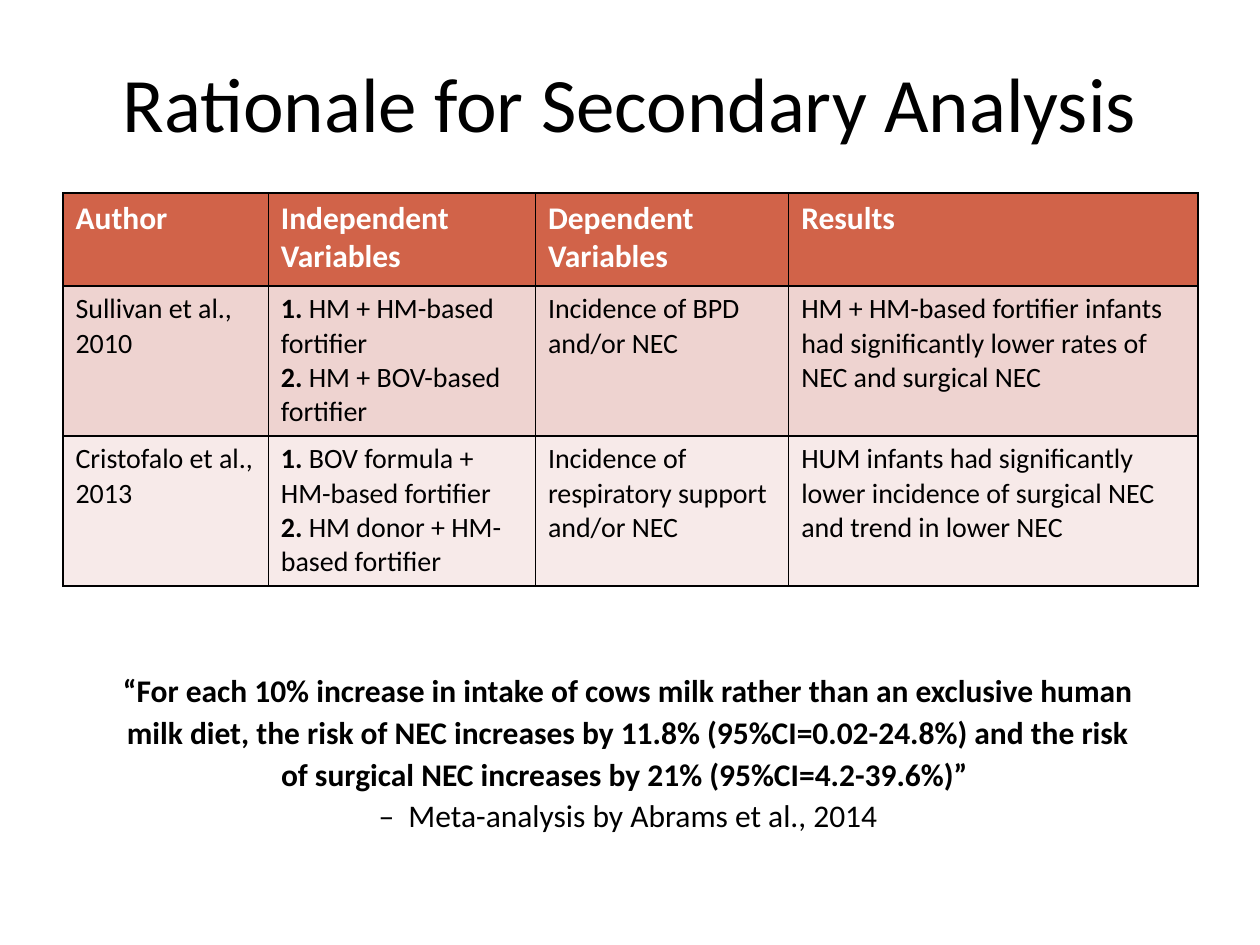
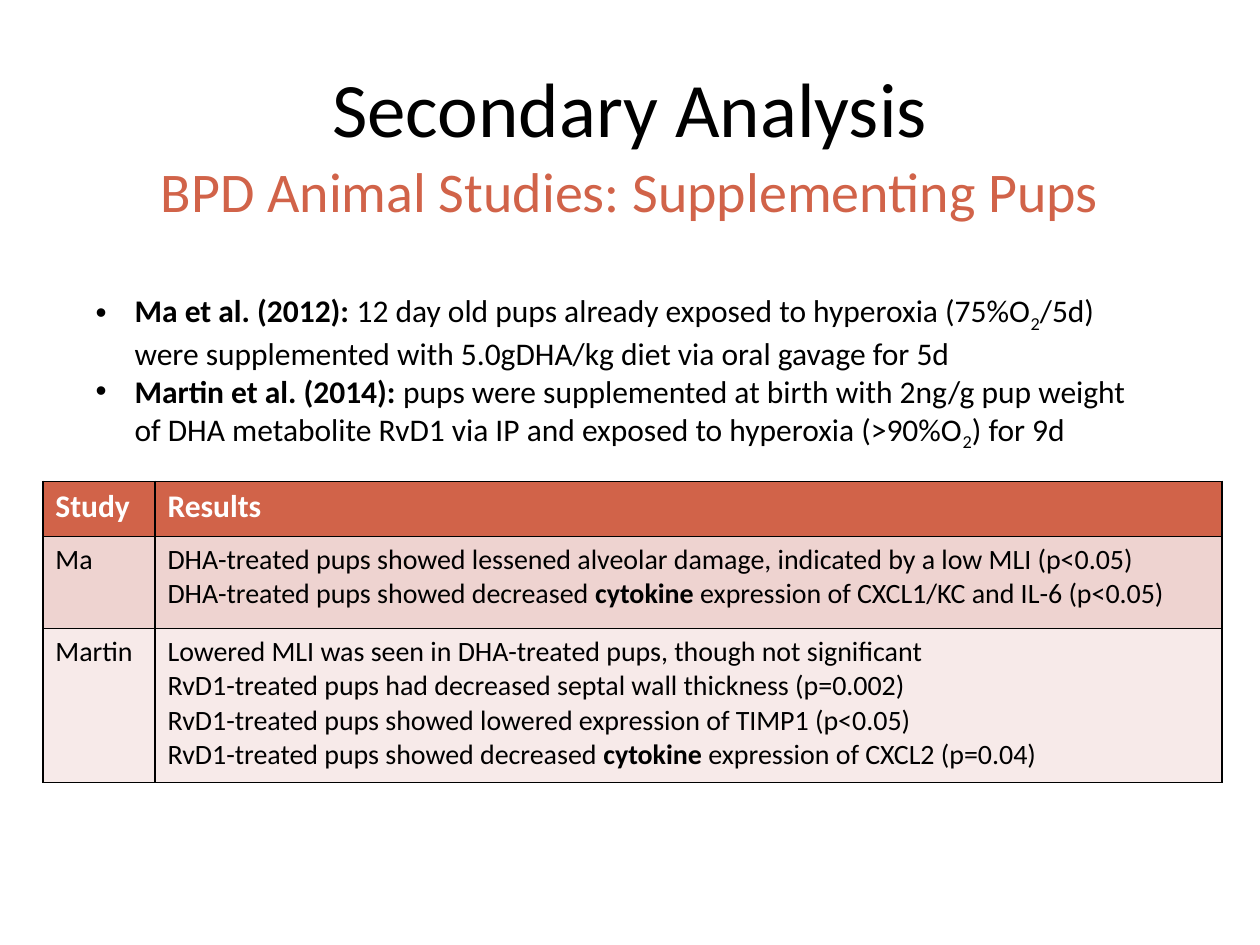
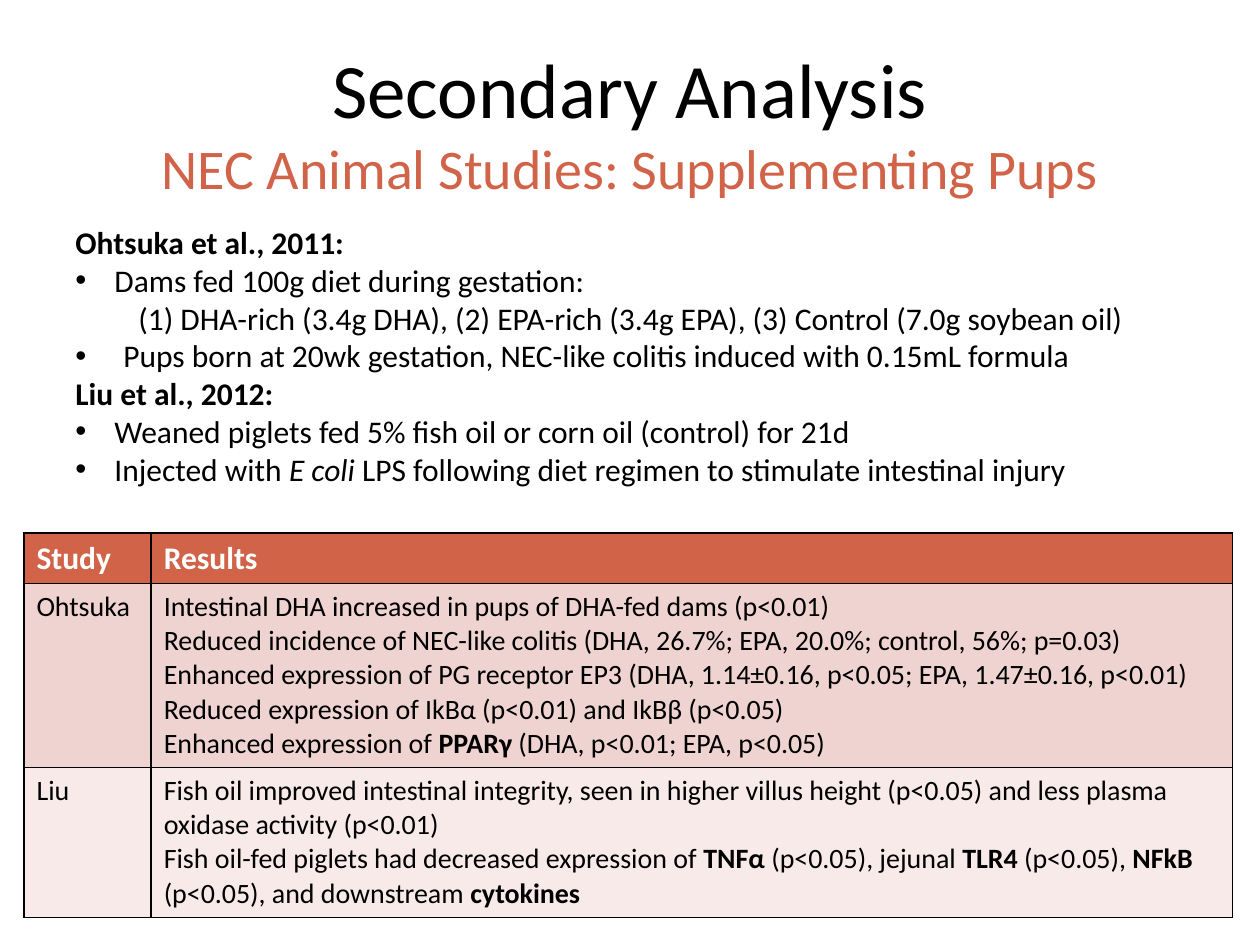
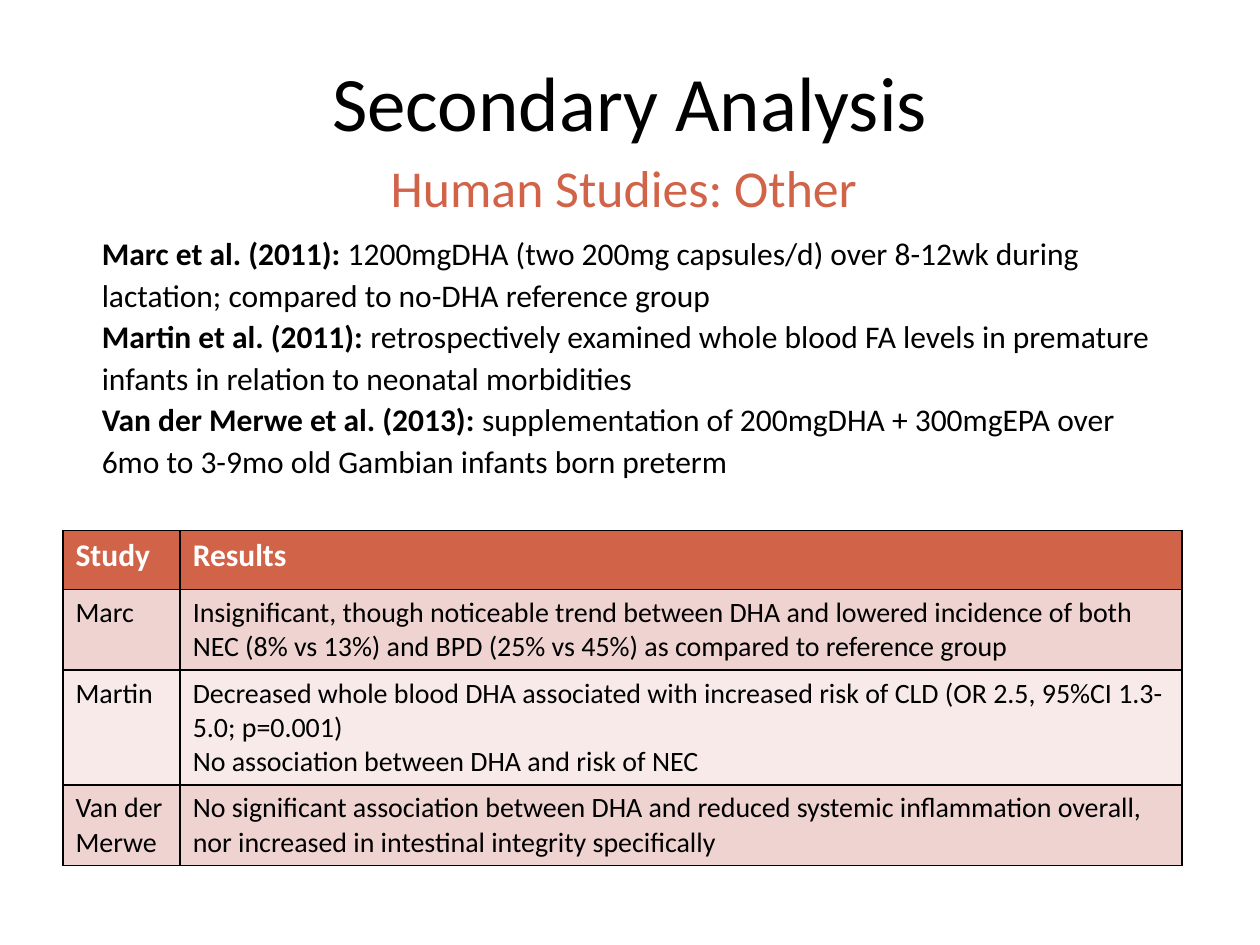
from dataclasses import dataclass

from lxml import etree
from pptx import Presentation
from pptx import util as u
from pptx.dml.color import RGBColor
from pptx.enum import text
from pptx.oxml import ns


@dataclass(frozen=True)
class Theme:
    font: str = "Calibri"
    ink: str = "000000"
    paper: str = "FFFFFF"
    accent: str = "D16349"
    bands: tuple = ("EED3D0", "F7EAE9")
    title_size: float = 44
    subtitle_size: float = 32
    body_size: float = 18
    cell_size: float = 16
    border: float = 1


THEME = Theme()
SLIDE_WIDTH, SLIDE_HEIGHT = 10, 7.5
MARGIN = SLIDE_WIDTH / 20
CONTENT_WIDTH = SLIDE_WIDTH - 2 * MARGIN

# Left margin and first-line indent of each paragraph kind, in inches
INDENTS = {"bullet": (0.31, -0.31), "wide bullet": (0.38, -0.38), "nested": (0.5, 0)}

# In all wording: *bold*, _italic_, ~subscript~; a new line starts a paragraph.
# Boxes are left, top, width, height; titles and subtitles give top and height.
SLIDES = [
    {
        "title": ("Rationale for Secondary Analysis", 0.3, 1.02),
        "table": {
            "at": (0.5, 1.53),
            "columns": (1.63, 2.12, 2.01, 3.25),
            "rows": (0.74, 1.19, 1.19),
            "cells": [
                ("Author", "Independent Variables", "Dependent Variables", "Results"),
                ("Sullivan et al., 2010",
                 "*1. *HM + HM-based fortifier\n*2. *HM + BOV-based fortifier",
                 "Incidence of BPD and/or NEC",
                 "HM + HM-based fortifier infants had significantly lower rates "
                 "of NEC and surgical NEC"),
                ("Cristofalo et al., 2013",
                 "*1. *BOV formula + HM-based fortifier\n"
                 "*2. *HM donor + HM-based fortifier",
                 "Incidence of respiratory support and/or NEC",
                 "HUM infants had significantly lower incidence of surgical NEC "
                 "and trend in lower NEC"),
            ],
        },
        "body": {
            "box": (0.78, 5.25, 8.41, 1.43),
            "align": text.PP_ALIGN.CENTER,
            "line_spacing": 1.1,
            "paragraphs": [
                ("plain", "*“For each 10% increase in intake of cows milk rather than an "
                          "exclusive human milk diet, the risk of NEC increases by 11.8% "
                          "(95%CI=0.02-24.8%) and the risk of surgical NEC increases by "
                          "21% (95%CI=4.2-39.6%)” *"),
                ("plain", "–  Meta-analysis by Abrams et al., 2014"),
            ],
        },
    },
    {
        "title": ("Secondary Analysis", 0.36, 0.98),
        "subtitle": ("BPD Animal Studies: Supplementing Pups", 1.19, 0.69),
        "table": {
            "at": (0.34, 3.82),
            "columns": (0.89, 8.47),
            "rows": (0.44, 0.73, 1.22),
            "cells": [
                ("Study", "Results"),
                ("Ma",
                 "DHA-treated pups showed lessened alveolar damage, indicated by a low "
                 "MLI (p<0.05)\n"
                 "DHA-treated pups showed decreased *cytokine* expression of CXCL1/KC "
                 "and IL-6 (p<0.05)"),
                ("Martin",
                 "Lowered MLI was seen in DHA-treated pups, though not significant\n"
                 "RvD1-treated pups had decreased septal wall thickness (p=0.002)\n"
                 "RvD1-treated pups showed lowered expression of TIMP1 (p<0.05)\n"
                 "RvD1-treated pups showed decreased *cytokine* expression of CXCL2 "
                 "(p=0.04)"),
            ],
        },
        "body": {
            "box": (0.66, 2.26, 8.51, 1.31),
            "paragraphs": [
                ("bullet", "*Ma et al. (2012): *12 day old pups already exposed to hyperoxia "
                           "(75%O~2~/5d) were supplemented with 5.0gDHA/kg diet via oral "
                           "gavage for 5d"),
                ("bullet", "*Martin et al. (2014):* pups were supplemented at birth with "
                           "2ng/g pup weight of DHA metabolite RvD1 via IP and exposed to "
                           "hyperoxia (>90%O~2~) for 9d"),
            ],
        },
    },
    {
        "title": ("Secondary Analysis", 0.23, 0.93),
        "subtitle": ("NEC Animal Studies: Supplementing Pups", 1.01, 0.71),
        "table": {
            "at": (0.19, 4.23),
            "columns": (1.01, 8.58),
            "rows": (0.4, 1.46, 1.19),
            "cells": [
                ("Study", "Results"),
                ("Ohtsuka",
                 "Intestinal DHA increased in pups of DHA-fed dams (p<0.01)\n"
                 "Reduced incidence of NEC-like colitis (DHA, 26.7%; EPA, 20.0%; "
                 "control, 56%; p=0.03)\n"
                 "Enhanced expression of PG receptor EP3 (DHA, 1.14±0.16, p<0.05; "
                 "EPA, 1.47±0.16, p<0.01)\n"
                 "Reduced expression of IkBα (p<0.01) and IkBβ (p<0.05)\n"
                 "Enhanced expression of *PPARγ* (DHA, p<0.01; EPA, p<0.05)"),
                ("Liu",
                 "Fish oil improved intestinal integrity, seen in higher villus height "
                 "(p<0.05) and less plasma oxidase activity (p<0.01)\n"
                 "Fish oil-fed piglets had decreased expression of *TNFα* (p<0.05), "
                 "jejunal *TLR4* (p<0.05), *NFkB *(p<0.05), and downstream *cytokines*"),
            ],
        },
        "body": {
            "box": (0.5, 1.72, 8.71, 2.22),
            "paragraphs": [
                ("plain", "*Ohtsuka et al., 2011:*"),
                ("bullet", "Dams fed 100g diet during gestation:"),
                ("nested", "(1) DHA-rich (3.4g DHA), (2) EPA-rich (3.4g EPA), "
                           "(3) Control (7.0g soybean oil)"),
                ("wide bullet", "Pups born at 20wk gestation, NEC-like colitis induced with "
                                "0.15mL formula"),
                ("plain", "*Liu et al., 2012:*"),
                ("bullet", "Weaned piglets fed 5% fish oil or corn oil (control) for 21d"),
                ("bullet", "Injected with _E coli _LPS following diet regimen to stimulate "
                           "intestinal injury"),
            ],
        },
    },
    {
        "title": ("Secondary Analysis", 0.39, 0.81),
        "subtitle": ("Human Studies: Other ", 1.19, 0.54),
        "subtitle_size": 29.6,
        "table": {
            "at": (0.5, 4.21),
            "columns": (0.93, 7.95),
            "rows": (0.47, 0.64, 0.91, 0.64),
            "cells": [
                ("Study", "Results"),
                ("Marc",
                 "Insignificant, though noticeable trend between DHA and lowered incidence "
                 "of both NEC (8% vs 13%) and BPD (25% vs 45%) as compared to reference "
                 "group"),
                ("Martin",
                 "Decreased whole blood DHA associated with increased risk of CLD (OR 2.5, "
                 "95%CI 1.3-5.0; p=0.001)\n"
                 "No association between DHA and risk of NEC"),
                ("Van der Merwe",
                 "No significant association between DHA and reduced systemic inflammation "
                 "overall, nor increased in intestinal integrity specifically"),
            ],
        },
        "body": {
            "box": (0.71, 1.78, 8.66, 2.1),
            "line_spacing": 1.1,
            "paragraphs": [
                ("plain", "*Marc et al. (2011): *1200mgDHA (two 200mg capsules/d) over "
                          "8-12wk during lactation; compared to no-DHA reference group"),
                ("plain", "*Martin et al. (2011): *retrospectively examined whole blood FA "
                          "levels in premature infants in relation to neonatal morbidities"),
                ("plain", "*Van der Merwe et al. (2013): *supplementation of 200mgDHA + "
                          "300mgEPA over 6mo to 3-9mo old Gambian infants born preterm"),
            ],
        },
    },
]


def split_marks(wording):
    """Yield (piece, active marks) for wording marked with *, _ and ~."""
    active, piece = set(), ""
    for letter in wording:
        if letter not in "*_~":
            piece += letter
            continue
        if piece:
            yield piece, frozenset(active)
        active ^= {letter}
        piece = ""
    if piece:
        yield piece, frozenset(active)


def write(paragraph, wording, size, color=THEME.ink, bold=False):
    for piece, marks in split_marks(wording):
        run = paragraph.add_run()
        run.text = piece
        font = run.font
        font.name, font.size = THEME.font, u.Pt(size)
        font.color.rgb = RGBColor.from_string(color)
        font.bold = bold or "*" in marks
        font.italic = "_" in marks
        if "~" in marks:
            run._r.get_or_add_rPr().set("baseline", "-25000")


def indent(paragraph, kind):
    if kind not in INDENTS:
        return
    properties = paragraph._p.get_or_add_pPr()
    for name, length in zip(("marL", "indent"), INDENTS[kind]):
        properties.set(name, str(u.Inches(length)))
    if kind.endswith("bullet"):
        etree.SubElement(properties, ns.qn("a:buFont"), typeface="Arial")
        etree.SubElement(properties, ns.qn("a:buChar"), char="•")


def add_text_frame(slide, box):
    frame = slide.shapes.add_textbox(*map(u.Inches, box)).text_frame
    frame.word_wrap = True
    return frame


def add_heading(slide, heading, size, color, anchor, space_before=0):
    wording, top, height = heading
    frame = add_text_frame(slide, (MARGIN, top, CONTENT_WIDTH, height))
    frame.vertical_anchor = anchor
    paragraph = frame.paragraphs[0]
    paragraph.alignment = text.PP_ALIGN.CENTER
    paragraph.space_before = u.Pt(space_before)
    write(paragraph, wording, size, color)


def add_body(slide, body):
    frame = add_text_frame(slide, body["box"])
    frame.auto_size = text.MSO_AUTO_SIZE.SHAPE_TO_FIT_TEXT
    for index, (kind, wording) in enumerate(body["paragraphs"]):
        paragraph = frame.add_paragraph() if index else frame.paragraphs[0]
        paragraph.alignment = body.get("align", text.PP_ALIGN.LEFT)
        paragraph.line_spacing = body.get("line_spacing", 1.0)
        indent(paragraph, kind)
        write(paragraph, wording, THEME.body_size)


def draw_borders(cell):
    properties = cell._tc.get_or_add_tcPr()
    for side in ("lnL", "lnR", "lnT", "lnB"):
        line = etree.SubElement(properties, ns.qn(f"a:{side}"), w=str(u.Pt(THEME.border)))
        fill = etree.SubElement(line, ns.qn("a:solidFill"))
        etree.SubElement(fill, ns.qn("a:srgbClr"), val=THEME.ink)


def fill_cell(cell, wording, row):
    header = row == 0
    draw_borders(cell)
    cell.fill.solid()
    color = THEME.accent if header else THEME.bands[(row - 1) % len(THEME.bands)]
    cell.fill.fore_color.rgb = RGBColor.from_string(color)
    for index, line in enumerate(wording.split("\n")):
        frame = cell.text_frame
        paragraph = frame.add_paragraph() if index else frame.paragraphs[0]
        if header:
            write(paragraph, line, THEME.body_size, THEME.paper, bold=True)
        else:
            write(paragraph, line, THEME.cell_size)


def add_results_table(slide, content):
    columns, rows = content["columns"], content["rows"]
    box = (*content["at"], sum(columns), sum(rows))
    table = slide.shapes.add_table(len(rows), len(columns), *map(u.Inches, box)).table
    for column, width in zip(table.columns, columns):
        column.width = u.Inches(width)
    for row, height in zip(table.rows, rows):
        row.height = u.Inches(height)
    for row, wordings in enumerate(content["cells"]):
        for column, wording in enumerate(wordings):
            fill_cell(table.cell(row, column), wording, row)


def build_slide(presentation, content):
    slide = presentation.slides.add_slide(presentation.slide_layouts[6])
    add_heading(slide, content["title"], THEME.title_size, THEME.ink,
                text.MSO_ANCHOR.MIDDLE)
    if "subtitle" in content:
        size = content.get("subtitle_size", THEME.subtitle_size)
        add_heading(slide, content["subtitle"], size, THEME.accent,
                    text.MSO_ANCHOR.TOP, space_before=2)
    add_results_table(slide, content["table"])
    add_body(slide, content["body"])


def main():
    presentation = Presentation()
    presentation.slide_width = u.Inches(SLIDE_WIDTH)
    presentation.slide_height = u.Inches(SLIDE_HEIGHT)
    for content in SLIDES:
        build_slide(presentation, content)
    presentation.save("out.pptx")


if __name__ == "__main__":
    main()
